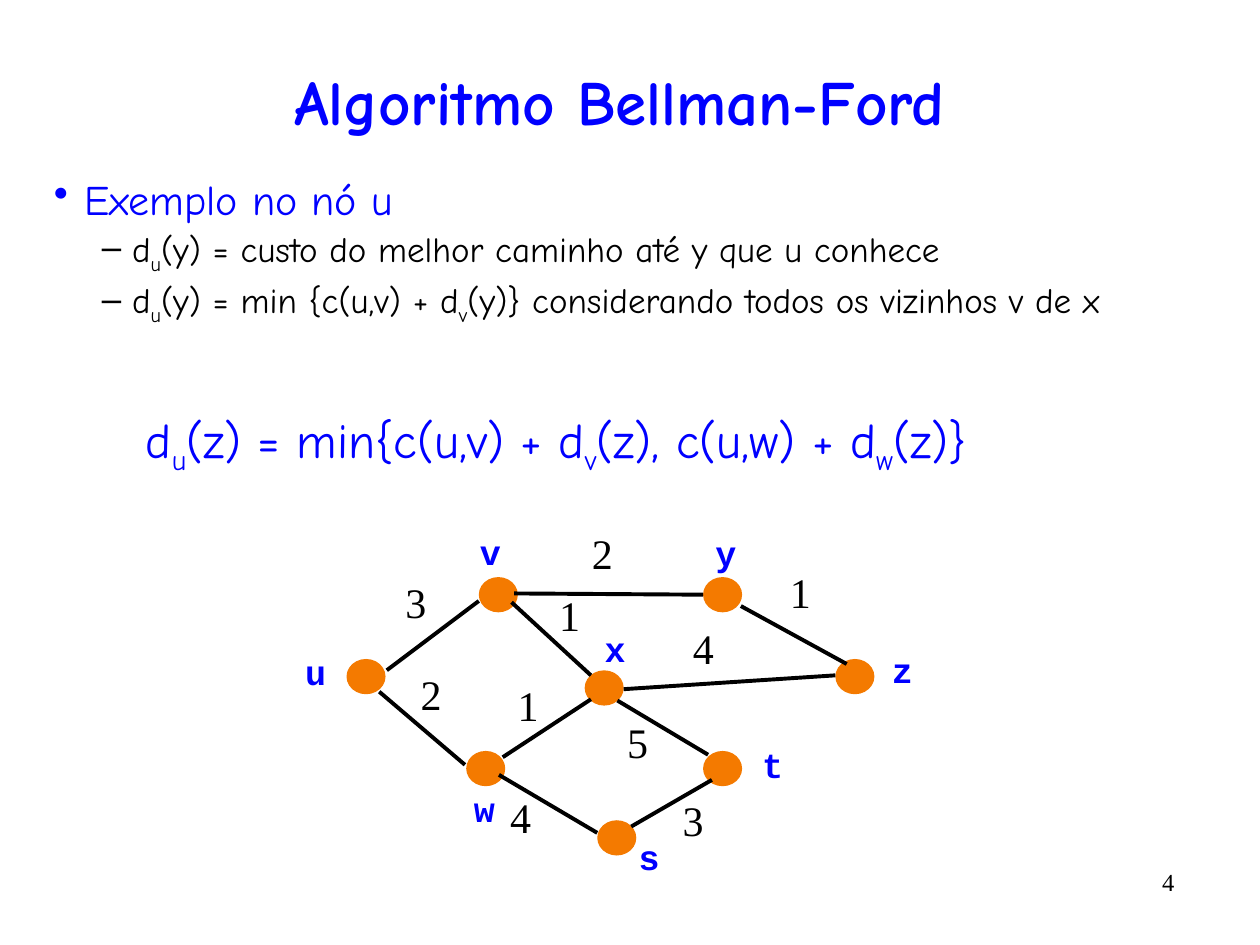
from lxml import etree
from pptx import Presentation
from pptx.dml.color import RGBColor
from pptx.enum.shapes import MSO_CONNECTOR, MSO_SHAPE
from pptx.enum.text import MSO_ANCHOR, PP_ALIGN
from pptx.oxml.ns import qn
from pptx.util import Inches, Pt

LEFT, CENTER, RIGHT = PP_ALIGN.LEFT, PP_ALIGN.CENTER, PP_ALIGN.RIGHT
OVAL, STRAIGHT = MSO_SHAPE.OVAL, MSO_CONNECTOR.STRAIGHT
COLORS = {"blue": "0000FF", "black": "000000", "node": "F47A00"}
HAND, MONO, SERIF = "Comic Neue", "Courier New", "Times New Roman"

NODE_SIZE = (0.31, 0.28)
# node: (left, top), then label (left, top, width), relative to the graph
NODES = {
    "u": ((0.45, 1.13), (0.02, 1.01, 0.37)),
    "w": ((1.40, 1.86), (1.33, 2.10, 0.43)),
    "v": ((1.50, 0.48), (1.41, 0.06, 0.35)),
    "x": ((2.34, 1.22), (2.40, 0.83, 0.36)),
    "t": ((3.28, 1.86), (3.65, 1.75, 0.29)),
    "y": ((3.28, 0.48), (3.28, 0.07, 0.35)),
    "s": ((2.44, 2.41), (2.67, 2.48, 0.36)),
    "z": ((4.33, 1.13), (4.68, 1.00, 0.34)),
}
# start, end, cost, cost position
EDGES = [
    ((0.77, 1.22), (1.50, 0.67), "3", (0.82, 0.43)),  # u-v
    ((0.71, 1.39), (1.39, 1.97), "2", (0.94, 1.16)),  # u-w
    ((1.76, 0.68), (2.39, 1.26), "1", (2.04, 0.53)),  # v-x
    ((1.66, 2.05), (2.44, 2.51), "4", (1.65, 2.13)),  # w-s
    ((1.69, 1.91), (2.39, 1.45), "1", (1.71, 1.24)),  # w-x
    ((2.60, 1.46), (3.32, 1.89), "5", (2.58, 1.54)),  # x-t
    ((2.71, 2.46), (3.35, 2.09), "3", (3.02, 2.16)),  # s-t
    ((2.65, 1.37), (4.33, 1.26), "4", (3.10, 0.79)),  # x-z
    ((1.78, 0.61), (3.28, 0.62), "2", (2.30, 0.04)),  # v-y
    ((3.58, 0.71), (4.42, 1.17), "1", (3.87, 0.35)),  # y-z
]


def rgb(color):
    return RGBColor.from_string(COLORS[color])


def add_runs(paragraph, parts, font, size, color, bold=False):
    """Add the parts as runs; every second one is a subscript."""
    for index, part in enumerate(parts):
        run = paragraph.add_run()
        run.text = part
        run.font.name = font
        run.font.size = Pt(size)
        run.font.bold = bold
        run.font.color.rgb = rgb(color)
        if index % 2:
            run.font._element.set("baseline", "-25000")


def add_frame(shapes, box, wrap=True):
    frame = shapes.add_textbox(*map(Inches, box)).text_frame
    frame.word_wrap = wrap
    return frame


def add_line(shapes, box, parts, font, size, color,
             align=LEFT, bold=False, wrap=True, anchor=MSO_ANCHOR.TOP):
    """Add a text box with a single paragraph."""
    frame = add_frame(shapes, box, wrap)
    frame.vertical_anchor = anchor
    paragraph = frame.paragraphs[0]
    paragraph.alignment = align
    add_runs(paragraph, parts, font, size, color, bold)


def set_bullet(paragraph, char, indent):
    props = paragraph._p.get_or_add_pPr()
    props.set("marL", str(Inches(indent)))
    props.set("indent", str(-Inches(0.24)))
    etree.SubElement(props, qn("a:buChar")).set("char", char)


def add_explanation(shapes, box):
    frame = add_frame(shapes, box)
    heading = frame.paragraphs[0]
    set_bullet(heading, "•", 0.24)
    add_runs(heading, ["Exemplo no nó u"], HAND, 24, "blue")
    definitions = [
        ["d", "u", "(y) = custo do melhor caminho até y que u conhece"],
        ["d", "u", "(y) = min {c(u,v) + d", "v",
         "(y)} considerando todos os vizinhos v de x"],
    ]
    for parts in definitions:
        paragraph = frame.add_paragraph()
        paragraph.level = 1
        paragraph.space_before = Pt(2)
        set_bullet(paragraph, "–", 0.62)
        add_runs(paragraph, parts, HAND, 20, "black")


def add_graph(slide, left, top):
    shapes = slide.shapes.add_group_shape().shapes

    def place(point):
        return left + point[0], top + point[1]

    for corner, _ in NODES.values():
        node = shapes.add_shape(OVAL, *map(Inches, place(corner) + NODE_SIZE))
        node.shadow.inherit = False
        node.fill.solid()
        node.fill.fore_color.rgb = rgb("node")
        node.line.fill.background()

    for start, end, _, _ in EDGES:
        edge = shapes.add_connector(
            STRAIGHT, *map(Inches, place(start) + place(end)))
        edge.line.color.rgb = rgb("black")
        edge.line.width = Pt(2.25)
        etree.SubElement(edge._element.spPr, qn("a:effectLst"))

    for _, _, cost, corner in EDGES:
        add_line(shapes, place(corner) + (0.37, 0.5), [cost], SERIF, 24,
                 "black", wrap=False)

    for name, (_, (x, y, width)) in NODES.items():
        add_line(shapes, place((x, y)) + (width, 0.43), [name], MONO, 20,
                 "blue", CENTER, bold=True, wrap=False)


def main():
    deck = Presentation()
    deck.slide_width, deck.slide_height = Inches(10), Inches(7.5)
    slide = deck.slides.add_slide(deck.slide_layouts[6])
    shapes = slide.shapes
    add_line(shapes, (8.42, 6.83, 1, 0.42), ["4"], SERIF, 14, "black", RIGHT)
    add_line(shapes, (0.33, 0.42, 9.17, 0.75), ["Algoritmo Bellman-Ford"],
             HAND, 36, "blue", CENTER, bold=True, anchor=MSO_ANCHOR.MIDDLE)
    add_explanation(shapes, (0.33, 1.33, 9.42, 6))
    add_graph(slide, 2.3, 4.1)
    formula = ["d", "u", "(z) = min{c(u,v) + d", "v", "(z), c(u,w) + d",
               "w", "(z)}"]
    add_line(shapes, (1.06, 3.2, 7.64, 0.57), formula, HAND, 28, "blue")
    deck.save("out.pptx")


if __name__ == "__main__":
    main()
